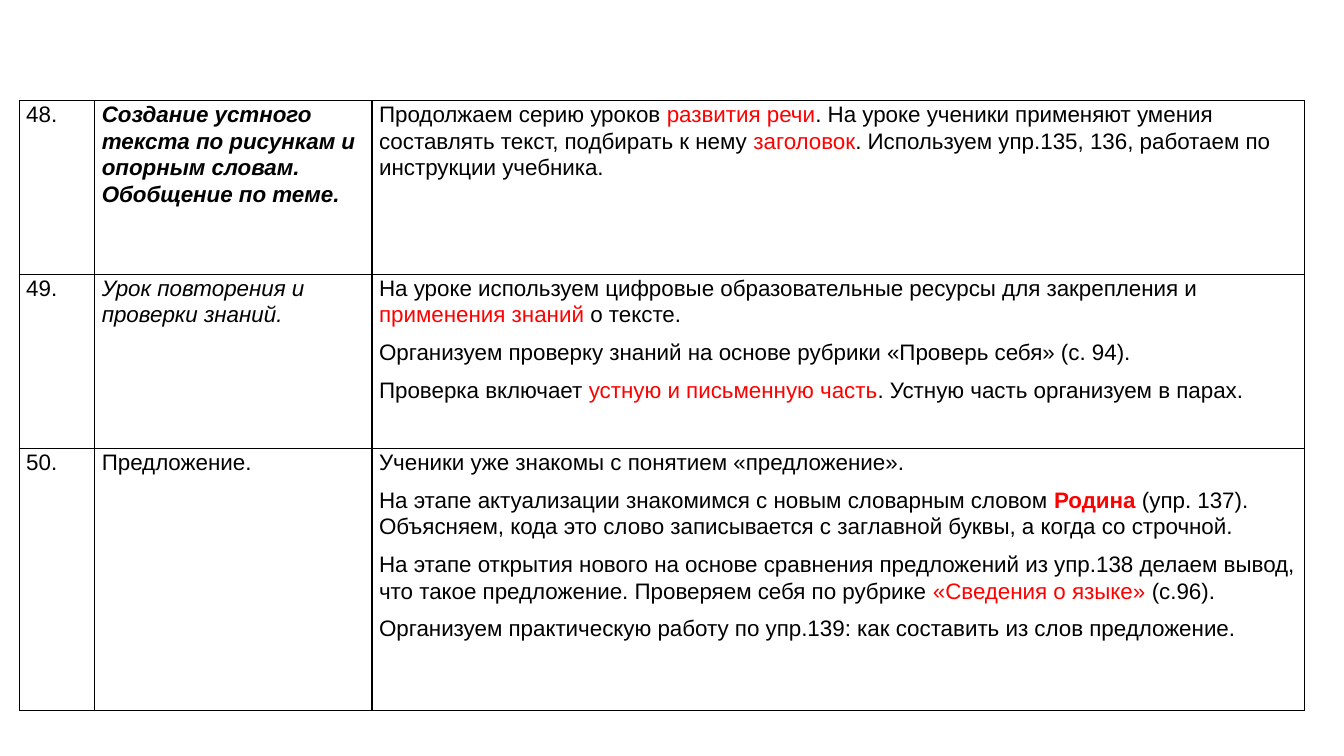
from lxml import etree
from pptx import Presentation
from pptx.dml.color import RGBColor
from pptx.enum.text import MSO_ANCHOR
from pptx.oxml.ns import qn
from pptx.util import Inches, Pt

TOP = MSO_ANCHOR.TOP
COLORS = {"text": "000000", "accent": "FF0000", "border": "000000"}
STYLES = {
    "plain": ("text", False, False),
    "italic": ("text", False, True),
    "title": ("text", True, True),
    "red": ("accent", False, False),
    "red bold": ("accent", True, False),
}
COLUMN_WIDTHS = (0.75, 2.75, 9.25)
ROW_HEIGHTS = (1.72, 1.73, 2.6)

LESSONS = [
    (
        [[("48.", "plain")]],
        [[("Создание устного текста по рисункам и опорным словам. Обобщение по теме.", "title")]],
        [[
            ("Продолжаем серию уроков ", "plain"),
            ("развития речи", "red"),
            (". На уроке ученики применяют умения составлять текст, подбирать к нему ", "plain"),
            ("заголовок", "red"),
            (". Используем упр.135, 136, работаем по инструкции учебника.", "plain"),
        ]],
    ),
    (
        [[("49.", "plain")]],
        [[("Урок повторения и проверки знаний.", "italic")]],
        [
            [
                ("На уроке используем цифровые образовательные ресурсы для закрепления и ", "plain"),
                ("применения знаний ", "red"),
                ("о тексте.", "plain"),
            ],
            [("Организуем проверку знаний на основе рубрики «Проверь себя» (с. 94).", "plain")],
            [
                ("Проверка включает ", "plain"),
                ("устную и письменную часть", "red"),
                (". Устную часть организуем в парах.", "plain"),
            ],
        ],
    ),
    (
        [[("50.", "plain")]],
        [[("Предложение.", "plain")]],
        [
            [("Ученики уже знакомы с понятием «предложение».", "plain")],
            [
                ("На этапе актуализации знакомимся с новым словарным словом ", "plain"),
                ("Родина", "red bold"),
                (" (упр. 137). Объясняем, кода это слово записывается с заглавной буквы, "
                 "а когда со строчной.", "plain"),
            ],
            [
                ("На этапе открытия нового на основе сравнения предложений из упр.138 делаем вывод, "
                 "что такое предложение. Проверяем себя по рубрике ", "plain"),
                ("«Сведения о языке» ", "red"),
                ("(с.96).", "plain"),
            ],
            [("Организуем практическую работу по упр.139: как составить из слов предложение.", "plain")],
        ],
    ),
]


def add_borders(cell):
    properties = cell._tc.get_or_add_tcPr()
    for side in ("lnL", "lnR", "lnT", "lnB"):
        line = etree.SubElement(properties, qn(f"a:{side}"), w=str(Pt(1)))
        fill = etree.SubElement(line, qn("a:solidFill"))
        etree.SubElement(fill, qn("a:srgbClr"), val=COLORS["border"])


def fill_cell(cell, paragraphs):
    add_borders(cell)
    cell.fill.background()
    cell.vertical_anchor = TOP
    cell.margin_left = cell.margin_right = Inches(0.07)
    cell.margin_top = cell.margin_bottom = 0
    frame = cell.text_frame
    for index, spans in enumerate(paragraphs):
        para = frame.add_paragraph() if index else frame.paragraphs[0]
        para.line_spacing = 1.07
        para.space_after = Pt(8)
        for text, style in spans:
            color, bold, italic = STYLES[style]
            span = para.add_run()
            span.text = text
            span.font.name = "Arial"
            span.font.size = Pt(16)
            span.font.bold = bold
            span.font.italic = italic
            span.font.color.rgb = RGBColor.from_string(COLORS[color])


def add_lesson_table(page, left, top, widths, heights):
    box = page.shapes.add_table(
        len(heights), len(widths),
        Inches(left), Inches(top), Inches(sum(widths)), Inches(sum(heights)),
    )
    table = box.table
    table.first_row = False
    table.horz_banding = False
    for column, width in zip(table.columns, widths):
        column.width = Inches(width)
    for row, height, lesson in zip(table.rows, heights, LESSONS):
        row.height = Inches(height)
        for cell, paragraphs in zip(row.cells, lesson):
            fill_cell(cell, paragraphs)


def main():
    deck = Presentation()
    deck.slide_width = Inches(13.33)
    deck.slide_height = Inches(7.5)
    page = deck.slides.add_slide(deck.slide_layouts[6])
    add_lesson_table(page, 0.19, 1, COLUMN_WIDTHS, ROW_HEIGHTS)
    deck.save("out.pptx")


if __name__ == "__main__":
    main()
